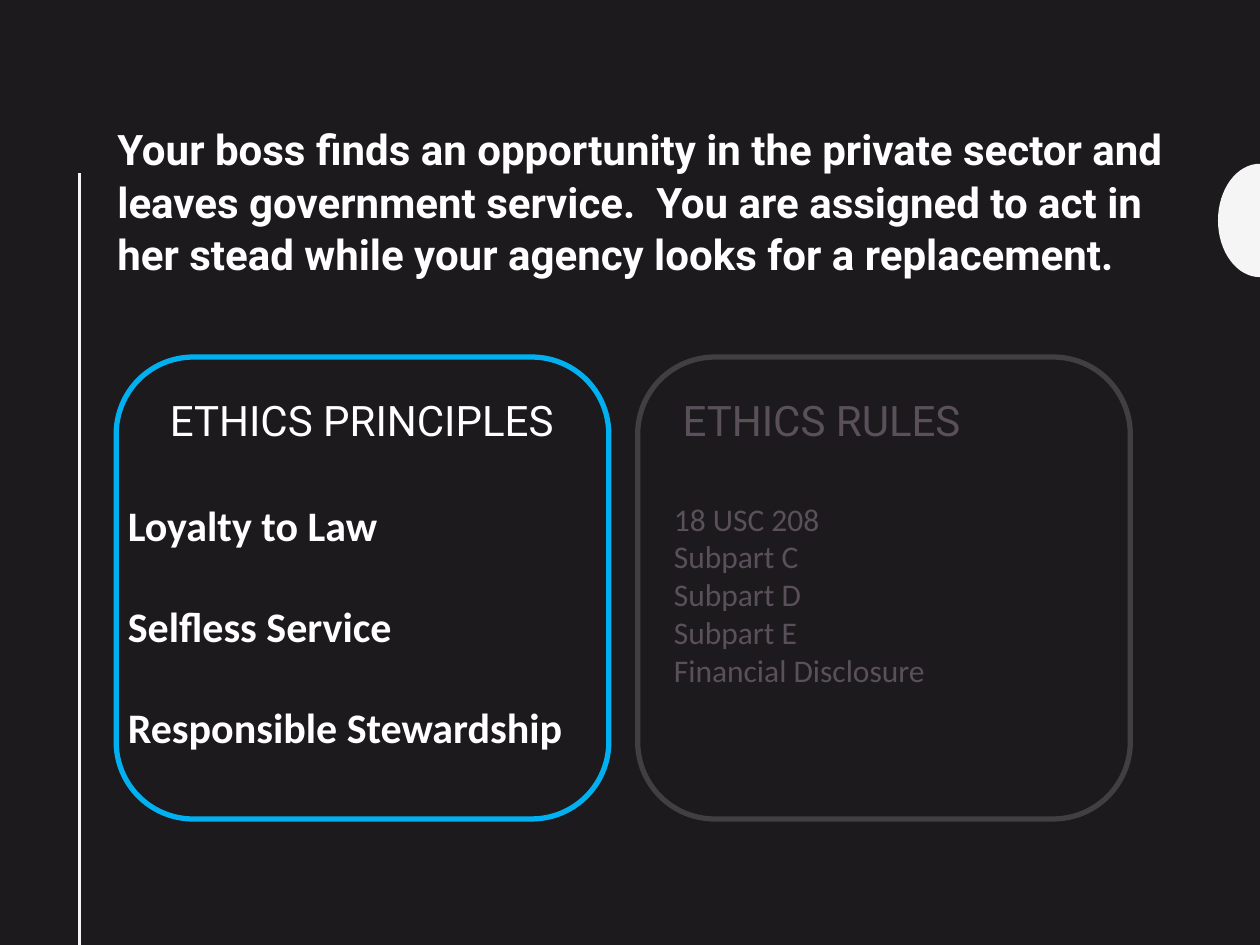
from math import cos, pi, sin

from lxml.etree import SubElement
from pptx import Presentation
from pptx.dml.color import RGBColor as Rgb
from pptx.enum.shapes import MSO_CONNECTOR as Connector, MSO_SHAPE as Preset
from pptx.oxml.ns import qn
from pptx.util import Pt

NIGHT = Rgb(0x1D, 0x1A, 0x1D)
PALE = Rgb(0xF5, 0xF5, 0xF5)
WHITE = Rgb(0xFF, 0xFF, 0xFF)
SKY = Rgb(0x00, 0xB0, 0xF0)
CHARCOAL = Rgb(0x40, 0x40, 0x40)
MUTED = Rgb(0x59, 0x50, 0x59)

SCENARIO = (
    "Your boss finds an opportunity in the private sector and leaves "
    "government service.  You are assigned to act in her stead while "
    "your agency looks for a replacement."
)
PRINCIPLES = ["Loyalty to Law", "Selfless Service", "Responsible Stewardship"]
RULES = ["18 USC 208", "Subpart C", "Subpart D", "Subpart E", "Financial Disclosure"]


class EthicsSlide:
    """Holds the text styles and the current slide, and draws each kind of element."""

    styles = {
        "scenario": {"name": "Roboto", "size": Pt(24), "bold": True},
        "heading": {"name": "Roboto", "size": Pt(24), "bold": False},
        "principle": {"name": "Calibri", "size": Pt(24), "bold": True},
        "rule": {"name": "Calibri", "size": Pt(18), "bold": False},
    }

    def __init__(self, deck):
        self.slide = deck.slides.add_slide(deck.slide_layouts[6])
        self.shapes = self.slide.shapes
        background = self.slide.background.fill
        background.solid()
        background.fore_color.rgb = NIGHT

    def half_disc(self, center_x, center_y, radius_x, radius_y, color, steps=32):
        angles = [pi / 2 + pi * step / steps for step in range(steps + 1)]
        arc = [
            (Pt(center_x + radius_x * cos(angle)), Pt(center_y - radius_y * sin(angle)))
            for angle in angles
        ]
        outline = self.shapes.build_freeform(*arc[0], scale=1.0)
        outline.add_line_segments(arc[1:], close=True)
        disc = outline.convert_to_shape()
        disc.shadow.inherit = False
        disc.fill.solid()
        disc.fill.fore_color.rgb = color
        disc.line.fill.background()

    def rule_line(self, x, top, bottom, color, weight):
        rule = self.shapes.add_connector(
            Connector.STRAIGHT, Pt(x), Pt(top), Pt(x), Pt(bottom)
        )
        rule.line.color.rgb = color
        rule.line.width = Pt(weight)
        SubElement(rule._element.spPr, qn("a:effectLst"))

    def panel(self, left, top, width, height, color):
        frame = self.shapes.add_shape(
            Preset.ROUNDED_RECTANGLE, Pt(left), Pt(top), Pt(width), Pt(height)
        )
        frame.shadow.inherit = False
        frame.fill.background()
        frame.line.color.rgb = color
        frame.line.width = Pt(3)

    def text(self, left, top, width, height, lines, style, color, **spacing):
        frame = self.shapes.add_textbox(
            Pt(left), Pt(top), Pt(width), Pt(height)
        ).text_frame
        frame.word_wrap = True
        for index, line in enumerate(lines):
            paragraph = frame.add_paragraph() if index else frame.paragraphs[0]
            for name, value in spacing.items():
                setattr(paragraph, name, value)
            run = paragraph.add_run()
            run.text = line
            for name, value in self.styles[style].items():
                setattr(run.font, name, value)
            run.font.color.rgb = color


def main():
    deck = Presentation()
    deck.slide_width, deck.slide_height = Pt(720), Pt(540)
    ethics = EthicsSlide(deck)

    ethics.half_disc(720, 126, 24, 32.4, PALE)
    ethics.rule_line(45.5, 99, 540, PALE, 2)
    columns = [
        ("ETHICS PRINCIPLES", 90, 66.4, WHITE, SKY),
        ("ETHICS RULES", 383, 364.4, MUTED, CHARCOAL),
    ]
    for heading, heading_left, panel_left, text_color, border in columns:
        ethics.text(heading_left, 222, 260, 36, [heading], "heading", text_color)
        ethics.panel(panel_left, 204, 281.5, 264, border)
    ethics.text(66, 282, 276.5, 153, PRINCIPLES, "principle", WHITE, space_after=Pt(28.8))
    ethics.text(378, 282, 348, 117, RULES, "rule", MUTED)
    ethics.text(60, 66, 612, 130, [SCENARIO], "scenario", WHITE, line_spacing=1.04)
    deck.save("out.pptx")


if __name__ == "__main__":
    main()
